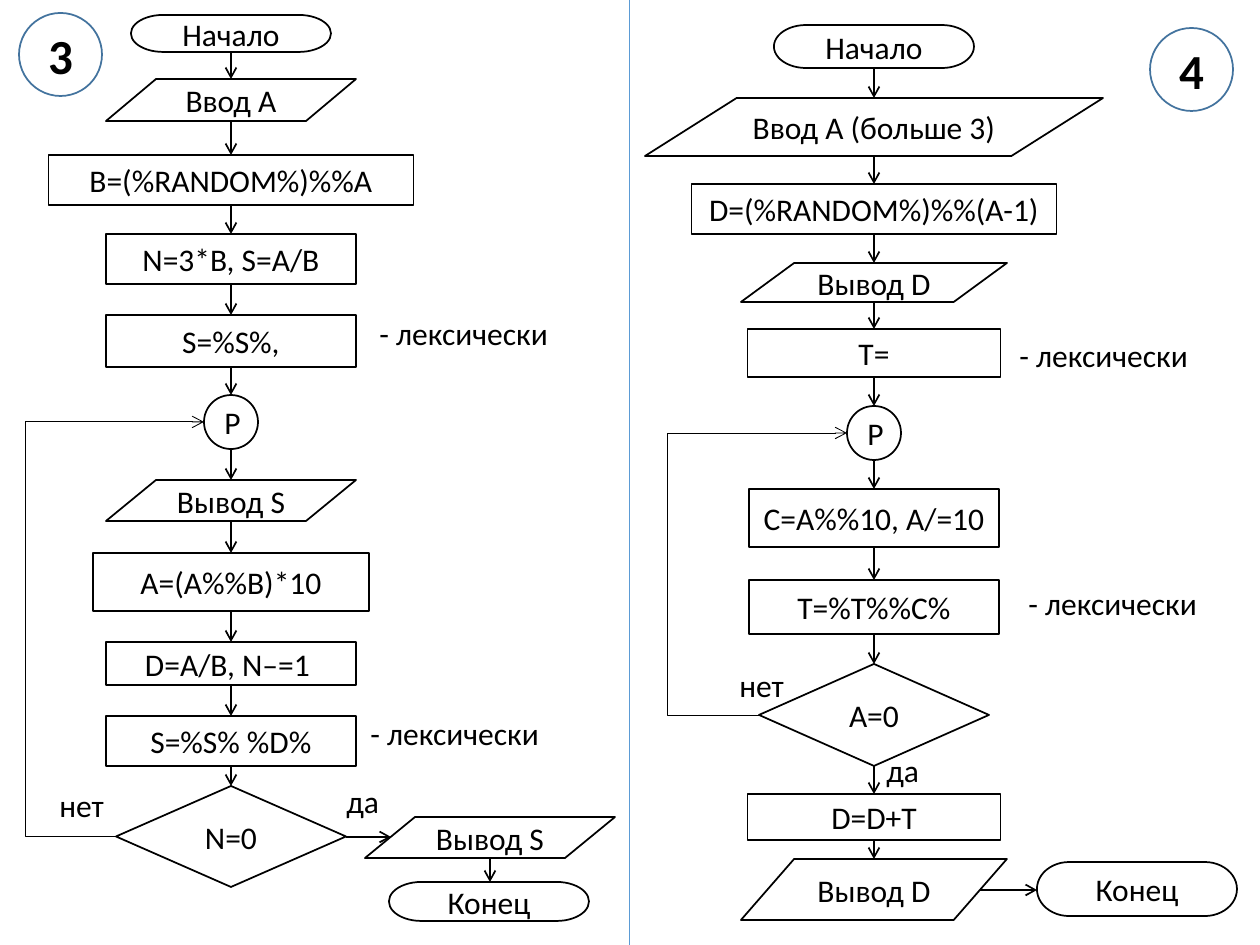
import pptx
import pptx.util
import pptx.dml.color
import pptx.enum.shapes
import pptx.enum.text
import pptx.oxml
import pptx.oxml.ns
from dataclasses import dataclass

PX = 914400 / 126
KIND = pptx.enum.shapes.MSO_SHAPE
LINK = pptx.enum.shapes.MSO_CONNECTOR
ALIGN = pptx.enum.text.PP_ALIGN
ANCHOR = pptx.enum.text.MSO_ANCHOR
RGB = pptx.dml.color.RGBColor.from_string

END, DATA, STEP = KIND.FLOWCHART_TERMINATOR, KIND.FLOWCHART_DATA, KIND.RECTANGLE
TEST, DOT = KIND.FLOWCHART_DECISION, KIND.OVAL


@dataclass
class Theme:
    font: str = "Calibri"
    ink: str = "000000"
    paper: str = "FFFFFF"
    ring: str = "43739E"
    rule: str = "5B9BD5"
    body: int = 18
    badge: int = 28
    thick: float = 1
    thin: float = 0.5


theme = Theme()
deck = pptx.Presentation()
deck.slide_width, deck.slide_height = round(1260 * PX), round(945 * PX)
slide = deck.slides.add_slide(deck.slide_layouts[6])
shapes = slide.shapes


def put(kind, x, y, w, h, text, line=theme.ink, fill=theme.paper, size=theme.body):
    """Draw a flowchart symbol, or a plain label when kind is None."""
    box = [round(n * PX) for n in (x, y, w, h)]
    if kind is None:
        shape = shapes.add_textbox(*box)
    else:
        shape = shapes.add_shape(kind, *box)
        shape.shadow.inherit = False
        shape.line.color.rgb = RGB(line)
        shape.line.width = pptx.util.Pt(theme.thick)
        if fill:
            shape.fill.solid()
            shape.fill.fore_color.rgb = RGB(fill)
        else:
            shape.fill.background()
    frame = shape.text_frame
    frame.text = text
    frame.word_wrap = kind is not None
    frame.vertical_anchor = ANCHOR.TOP if kind is None else ANCHOR.MIDDLE
    par = frame.paragraphs[0]
    par.alignment = ALIGN.LEFT if kind is None else ALIGN.CENTER
    font = par.runs[0].font
    font.name, font.size = theme.font, pptx.util.Pt(size)
    font.bold = size == theme.badge
    font.color.rgb = RGB(theme.ink)


def link(x1, y1, x2, y2, via=None, color=theme.ink, width=theme.thick, head=True):
    """Join two points; via is the x of a bent line's upright part."""
    kind = LINK.STRAIGHT if via is None else LINK.ELBOW
    line = shapes.add_connector(kind, *[round(n * PX) for n in (x1, y1, x2, y2)])
    line.line.color.rgb = RGB(color)
    line.line.width = pptx.util.Pt(width)
    props = line._element.spPr
    if head:
        tail = pptx.oxml.ns.qn("a:tailEnd")
        line.line._get_or_add_ln().append(props.makeelement(tail, {"type": "arrow"}))
    props.append(props.makeelement(pptx.oxml.ns.qn("a:effectLst"), {}))
    if via is not None:
        bend = round((via - x1) / (x2 - x1) * 100000)
        guides = props.find(".//" + pptx.oxml.ns.qn("a:avLst"))
        guide = pptx.oxml.ns.qn("a:gd")
        guides.append(guides.makeelement(guide, {"name": "adj1", "fmla": f"val {bend}"}))


# Each chart: centre, x of the loop's upright part, then (kind, top, width, height, text)
charts = [
    (231, 26, [
        (END, 15, 200, 37, "Начало"),
        (DATA, 79, 250, 42, "Ввод A"),
        (STEP, 155, 365, 50, "B=(%RANDOM%)%%A"),
        (STEP, 234, 250, 50, "N=3*B, S=A/B"),
        (STEP, 315, 250, 52, "S=%S%,"),
        (DOT, 395, 54, 54, "P"),
        (DATA, 480, 250, 41, "Вывод S"),
        (STEP, 553, 276, 58, "A=(A%%B)*10"),
        (STEP, 642, 250, 43, "D=A/B, N–=1 "),
        (STEP, 716, 250, 50, "S=%S% %D%"),
        (TEST, 786, 230, 101, "N=0"),
    ]),
    (874, 667, [
        (END, 25, 200, 43, "Начало"),
        (DATA, 98, 458, 58, "Ввод A (больше 3)"),
        (STEP, 184, 365, 50, "D=(%RANDOM%)%%(A-1)"),
        (DATA, 263, 266, 39, "Вывод D"),
        (STEP, 329, 253, 48, "T="),
        (DOT, 406, 54, 54, "P"),
        (STEP, 489, 250, 58, "C=A%%10, A/=10 "),
        (STEP, 580, 250, 54, "T=%T%%C%"),
        (TEST, 664, 230, 102, "A=0"),
        (STEP, 794, 253, 46, "D=D+T"),
        (DATA, 859, 266, 61, "Вывод D"),
    ]),
]

for mid, side, nodes in charts:
    last = None
    for kind, top, wide, high, text in nodes:
        put(kind, mid - wide / 2, top, wide, high, text)
        if last is not None:
            link(mid, last, mid, top)
        last = top + high
        if kind == DOT:
            goal = (mid - wide / 2, top + high / 2)
        if kind == TEST:
            link(mid - wide / 2, top + high / 2, *goal, via=side, width=theme.thin)

# Closing steps beside the main columns
put(DATA, 365, 817, 250, 41, "Вывод S")
put(END, 389, 882, 200, 39, "Конец")
put(END, 1037, 862, 200, 54, "Конец")
link(346, 837, 391, 837)
link(490, 858, 490, 882)
link(980, 890, 1037, 890)

for x, y, w, text in [
    (334, 776, 58, "да"),
    (47, 780, 71, "нет"),
    (358, 708, 197, "- лексически"),
    (367, 308, 197, "- лексически"),
    (874, 745, 58, "да"),
    (727, 660, 71, "нет"),
    (1016, 578, 197, "- лексически"),
    (1007, 330, 197, "- лексически"),
]:
    put(None, x, y, w, 50, text)

for x, y, text in [(19, 13, "3"), (1150, 28, "4")]:
    put(DOT, x, y, 83, 83, text, line=theme.ring, fill=None, size=theme.badge)

link(629, 0, 629, 945, color=theme.rule, width=theme.thin, head=False)

deck.save("out.pptx")
